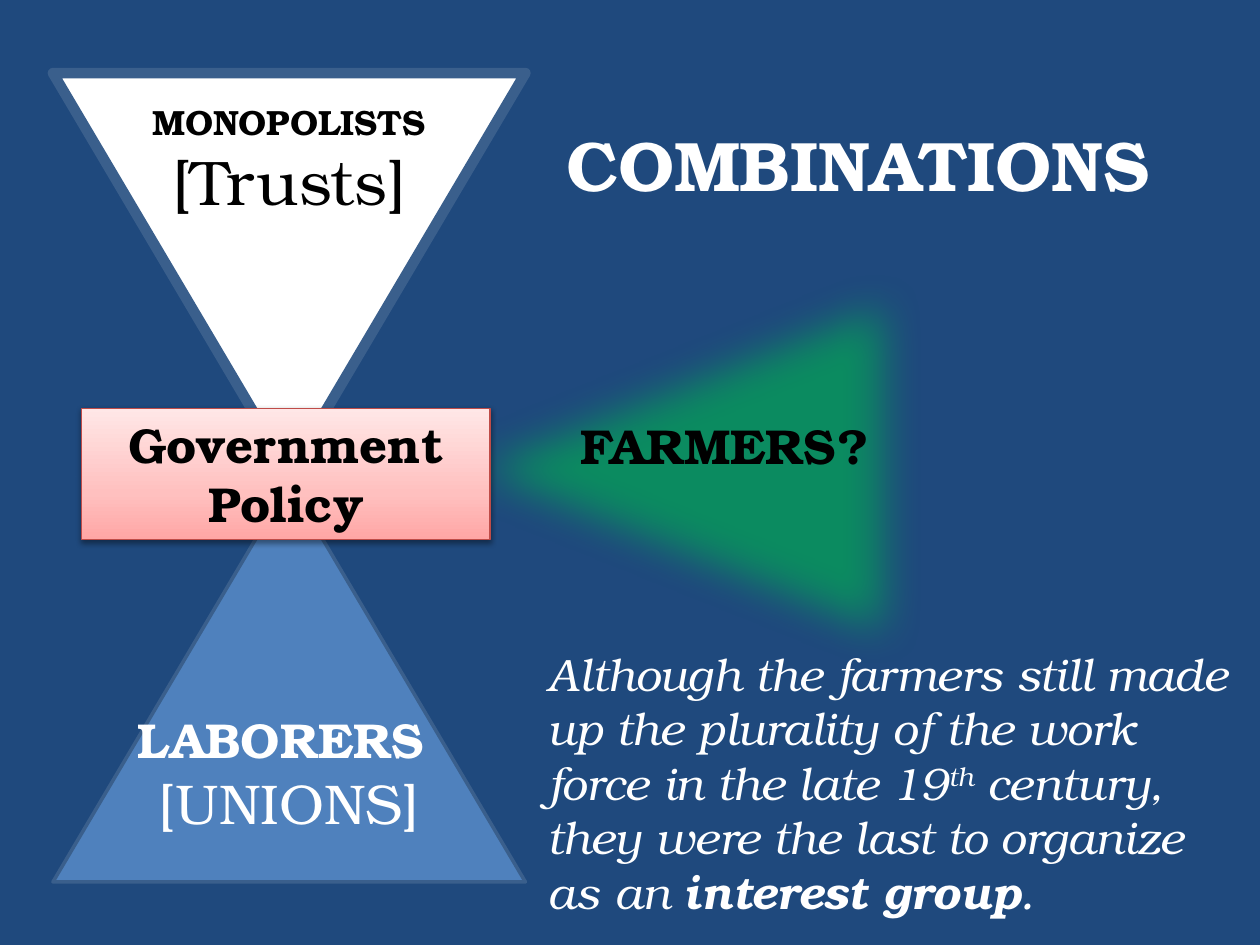
import pptx
import pptx.dml.color
import pptx.enum.shapes
import pptx.enum.text
import pptx.oxml
import pptx.oxml.ns
import pptx.util

FONT = "TeX Gyre Bonum"
WHITE, BLACK, EDGE = "FFFFFF", "000000", "3A5F8C"
SLIDE_W, SLIDE_H = 10, 7.5
SHAPES = pptx.enum.shapes.MSO_SHAPE
ANCHORS = pptx.enum.text.MSO_ANCHOR
ALIGN = pptx.enum.text.PP_ALIGN

# Content: each paragraph is a list of (text, format) runs
TITLE = [[("COMBINATIONS", {"size": 40, "bold": True})]]
REMARK = [[
    ("Although the farmers still made up the plurality of the work force in the late 19", {}),
    ("th", {"baseline": 30}),
    (" century, they were the last to organize as an ", {}),
    ("interest group", {"bold": True}),
    (".", {}),
]]
POLICY = [[("Government Policy", {"size": 28, "bold": True})]]
LABELS = [  # place, colour, paragraphs
    ((0.92, 0.75, 2.75, 1.04), BLACK,
     [[("MONOPOLISTS", {"size": 20, "bold": True})], [("[Trusts]", {"size": 36})]]),
    ((0.92, 5.58, 2.75, 1.11), WHITE,
     [[("LABORERS ", {"size": 28, "bold": True})], [("[UNIONS]", {"size": 32})]]),
    ((4.5, 3.25, 2.5, 0.57), BLACK,
     [[("FARMERS?", {"size": 28, "bold": True})]]),
]

# Triangles: place, rotation, fill, line width
HOURGLASS_X, TRI_W, TRI_H = 0.42, 3.75, 3.17
MONOPOLISTS = ((HOURGLASS_X, 0.58, TRI_W, TRI_H), 180, WHITE, 6)
LABORERS = ((HOURGLASS_X, 3.83, TRI_W, TRI_H), 0, "4F81BD", 2)
FARMERS = ((3.12, 1.38, TRI_W, 4.67), 270, "00B050", 2)
POLICY_STOPS = [(0, "FFA6A5"), (35, "FFC0BF"), (100, "FFE7E7")]


def rgb(value):
    return pptx.dml.color.RGBColor.from_string(value)


def inches(place):
    return [pptx.util.Inches(length) for length in place]


def drawing(tag, attributes="", inner=""):
    namespace = pptx.oxml.ns.nsdecls("a")
    return pptx.oxml.parse_xml(f"<a:{tag} {namespace} {attributes}>{inner}</a:{tag}>")


def write(frame, paragraphs, color, align=ALIGN.CENTER, anchor=ANCHORS.TOP, **base):
    frame.word_wrap = True
    frame.vertical_anchor = anchor
    for number, runs in enumerate(paragraphs):
        paragraph = frame.add_paragraph() if number else frame.paragraphs[0]
        paragraph.alignment = align
        for text, formats in runs:
            run = paragraph.add_run()
            run.text = text
            values = {"name": FONT, "bold": False, **base, **formats}
            baseline = values.pop("baseline", 0)
            values["size"] = pptx.util.Pt(values["size"])
            for key, value in values.items():
                setattr(run.font, key, value)
            run.font.color.rgb = rgb(color)
            if baseline:
                run._r.get_or_add_rPr().set("baseline", str(baseline * 1000))


def add_block(slide, kind, place, fill, line, width):
    block = slide.shapes.add_shape(kind, *inches(place))
    block.shadow.inherit = False
    block.fill.solid()
    block.fill.fore_color.rgb = rgb(fill)
    block.line.color.rgb = rgb(line)
    block.line.width = pptx.util.Pt(width)
    return block


def add_triangle(slide, place, rotation, fill, width):
    triangle = add_block(slide, SHAPES.ISOSCELES_TRIANGLE, place, fill, EDGE, width)
    triangle.rotation = rotation
    return triangle


def find(block, tag):
    return block._element.spPr.find(pptx.oxml.ns.qn(f"a:{tag}"))


def main():
    deck = pptx.Presentation()
    deck.slide_width, deck.slide_height = inches((SLIDE_W, SLIDE_H))
    slide = deck.slides.add_slide(deck.slide_layouts[5])
    slide.background.fill.solid()
    slide.background.fill.fore_color.rgb = rgb("1F497D")

    # Title and remark
    title = slide.shapes.title
    title.left, title.top, title.width, title.height = inches((3.89, 0.67, 5.84, 1.25))
    write(title.text_frame, TITLE, WHITE, anchor=ANCHORS.MIDDLE)
    remark = slide.shapes.add_textbox(*inches((4.25, 5.08, 5.71, 2.17)))
    write(remark.text_frame, REMARK, WHITE, ALIGN.LEFT, size=25.9, italic=True)

    # Hourglass, and the translucent farmers' triangle with soft edges
    for triangle in (MONOPOLISTS, LABORERS):
        add_triangle(slide, *triangle)
    farmers = add_triangle(slide, *FARMERS)
    find(farmers, "solidFill")[0].append(drawing("alpha", 'val="64000"'))
    find(farmers, "effectLst").append(drawing("softEdge", 'rad="317500"'))

    # Triangle labels
    for place, color, paragraphs in LABELS:
        label = slide.shapes.add_textbox(*inches(place))
        write(label.text_frame, paragraphs, color)

    # Policy box with gradient and shadow
    policy = add_block(slide, SHAPES.RECTANGLE, (0.65, 3.24, 3.24, 1.04),
                       WHITE, "BF4C48", 0.75)
    stops = "".join(f'<a:gs pos="{share * 1000}"><a:srgbClr val="{color}"/></a:gs>'
                    for share, color in POLICY_STOPS)
    plain = find(policy, "solidFill")
    plain.getparent().replace(plain, drawing(
        "gradFill", 'rotWithShape="1"',
        f'<a:gsLst>{stops}</a:gsLst><a:lin ang="16200000" scaled="0"/>'))
    find(policy, "effectLst").append(drawing(
        "outerShdw", 'blurRad="40000" dist="20000" dir="5400000" rotWithShape="0"',
        f'<a:srgbClr val="{BLACK}"><a:alpha val="38000"/></a:srgbClr>'))
    write(policy.text_frame, POLICY, BLACK)

    deck.save("out.pptx")


if __name__ == "__main__":
    main()
